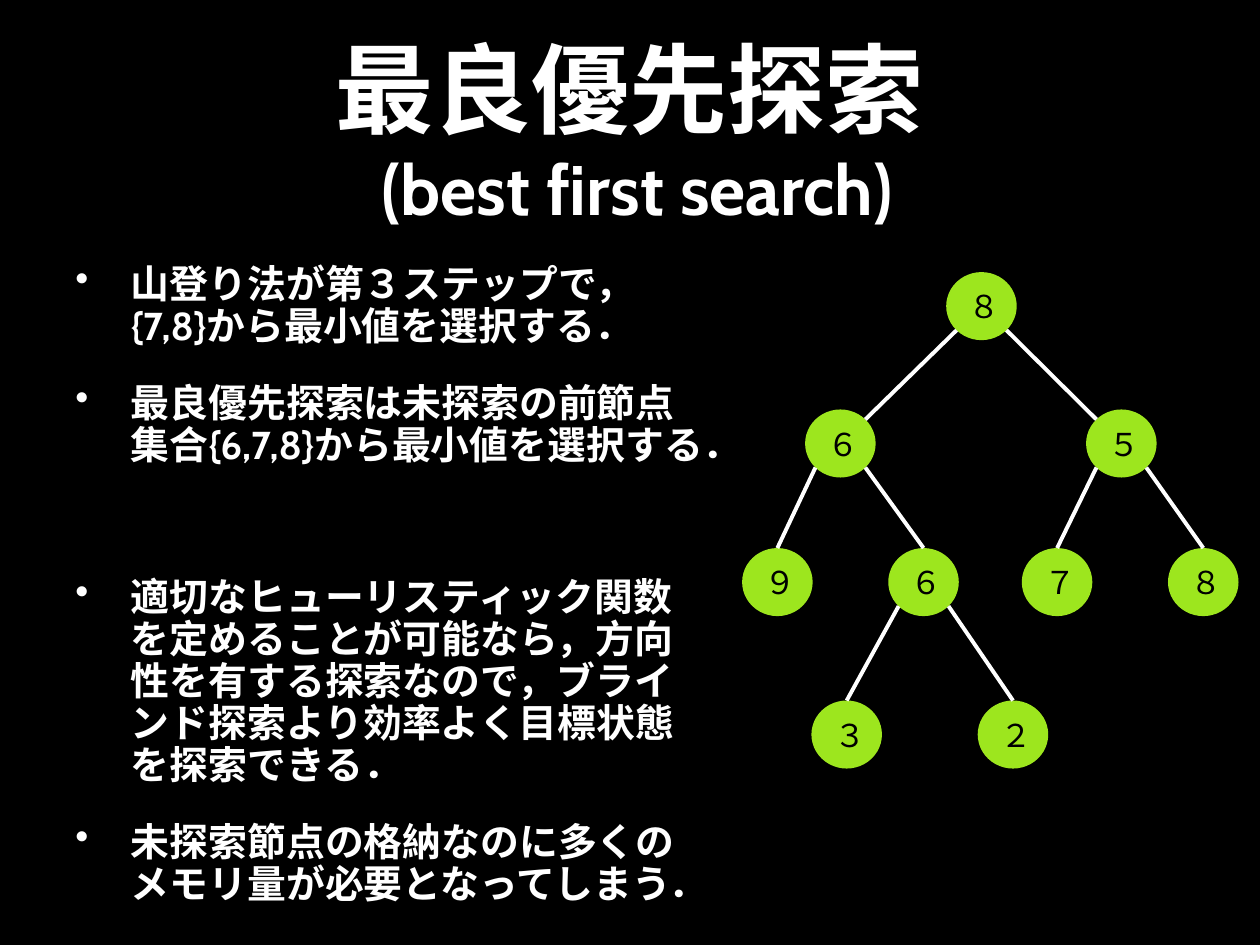
"""Build the best first search slide with its bullet list and search tree."""
import dataclasses
import math

import lxml.etree
import pptx
import pptx.dml.color
import pptx.enum.shapes
import pptx.enum.text
import pptx.oxml.ns
import pptx.util

TITLE = ("最良優先探索", " (best first search)")
BULLETS = [
    ("山登り法が第３ステップで，{7,8}から最小値を選択する．", 0),
    ("最良優先探索は未探索の前節点集合{6,7,8}から最小値を選択する．", 20),
    ("適切なヒューリスティック関数を定めることが可能なら，方向性を有する探索なので，"
     "ブラインド探索より効率よく目標状態を探索できる．", 63),
    ("未探索節点の格納なのに多くのメモリ量が必要となってしまう．", 20),
]
ROW_TOPS = (2.16, 3.25, 4.35, 5.56)
NODES = {
    "root": ("８", 7.79, 0),
    "left": ("６", 6.67, 1),
    "right": ("５", 8.9, 1),
    "left left": ("９", 6.17, 2),
    "left right": ("６", 7.33, 2),
    "right left": ("７", 8.39, 2),
    "right right": ("８", 9.55, 2),
    "deep left": ("３", 6.72, 3),
    "deep right": ("２", 8.04, 3),
}
CHILDREN = {
    "root": ("left", "right"),
    "left": ("left left", "left right"),
    "right": ("right left", "right right"),
    "left right": ("deep left", "deep right"),
}
NODE_WIDTH, NODE_HEIGHT = 0.56, 0.54
INDENT = 0.44
DIAGONAL = math.sqrt(0.5) / 2


@dataclasses.dataclass(frozen=True)
class Theme:
    font: str = "Cabin"
    back: str = "000000"
    light: str = "FFFFFF"
    node: str = "9DE61E"
    title: float = 56
    subtitle: float = 40
    body: float = 22.2
    label: float = 18
    line: float = 2.25


THEME = Theme()
inches = pptx.util.Inches


def paint(fill, color):
    fill.solid()
    fill.fore_color.rgb = pptx.dml.color.RGBColor.from_string(color)


def style(span, size, color, bold):
    span.font.name = THEME.font
    span.font.size = pptx.util.Pt(size)
    span.font.bold = bold
    span.font.color.rgb = pptx.dml.color.RGBColor.from_string(color)


def add_box(page, left, top, width, height):
    box = page.shapes.add_textbox(*map(inches, (left, top, width, height)))
    box.text_frame.word_wrap = True
    return box.text_frame


def add_title(page):
    frame = add_box(page, 0.85, 0.12, 8.29, 1.81)
    frame.vertical_anchor = pptx.enum.text.MSO_ANCHOR.MIDDLE
    para = frame.paragraphs[0]
    para.text = "\v".join(TITLE)
    para.alignment = pptx.enum.text.PP_ALIGN.CENTER
    for span, size in zip(para.runs, (THEME.title, THEME.subtitle)):
        style(span, size, THEME.light, True)


def add_bullets(page):
    frame = add_box(page, 0.5, 2.05, 5.22, 5.21)
    frame.text = "\n".join(text for text, gap in BULLETS)
    for para, (text, gap) in zip(frame.paragraphs, BULLETS):
        para.line_spacing = 0.9
        para.space_before = pptx.util.Pt(gap)
        properties = para._p.get_or_add_pPr()
        properties.set("marL", str(inches(INDENT)))
        properties.set("indent", str(-inches(INDENT)))
        bullet = lxml.etree.SubElement(properties, pptx.oxml.ns.qn("a:buChar"))
        bullet.set("char", "•")
        style(para.runs[0], THEME.body, THEME.light, True)


def add_node(page, label, center, row):
    shape = page.shapes.add_shape(
        pptx.enum.shapes.MSO_SHAPE.OVAL, inches(center - NODE_WIDTH / 2),
        inches(ROW_TOPS[row]), inches(NODE_WIDTH), inches(NODE_HEIGHT))
    shape.shadow.inherit = False
    paint(shape.fill, THEME.node)
    shape.line.fill.background()
    frame = shape.text_frame
    frame.word_wrap = False
    frame.vertical_anchor = pptx.enum.text.MSO_ANCHOR.MIDDLE
    para = frame.paragraphs[0]
    para.text = label
    para.alignment = pptx.enum.text.PP_ALIGN.LEFT
    style(para.runs[0], THEME.label, THEME.back, False)


def rim(name, across, down):
    label, center, row = NODES[name]
    return (inches(center + across * NODE_WIDTH),
            inches(ROW_TOPS[row] + (0.5 + down) * NODE_HEIGHT))


def add_edge(page, parent, child, side):
    start = rim(parent, side * DIAGONAL, DIAGONAL)
    if child in CHILDREN and parent == "root":
        end = rim(child, -side * DIAGONAL, -DIAGONAL)
    else:
        end = rim(child, 0, -0.5)
    edge = page.shapes.add_connector(
        pptx.enum.shapes.MSO_CONNECTOR.STRAIGHT, *start, *end)
    paint(edge.line.fill, THEME.light)
    edge.line.width = pptx.util.Pt(THEME.line)
    lxml.etree.SubElement(edge._element.spPr, pptx.oxml.ns.qn("a:effectLst"))


def main():
    deck = pptx.Presentation()
    deck.slide_width, deck.slide_height = inches(10), inches(7.5)
    page = deck.slides.add_slide(deck.slide_layouts[6])
    paint(page.background.fill, THEME.back)
    add_title(page)
    add_bullets(page)
    for node in NODES.values():
        add_node(page, *node)
    for parent, pair in CHILDREN.items():
        for child, side in zip(pair, (-1, 1)):
            add_edge(page, parent, child, side)
    deck.save("out.pptx")


if __name__ == "__main__":
    main()
